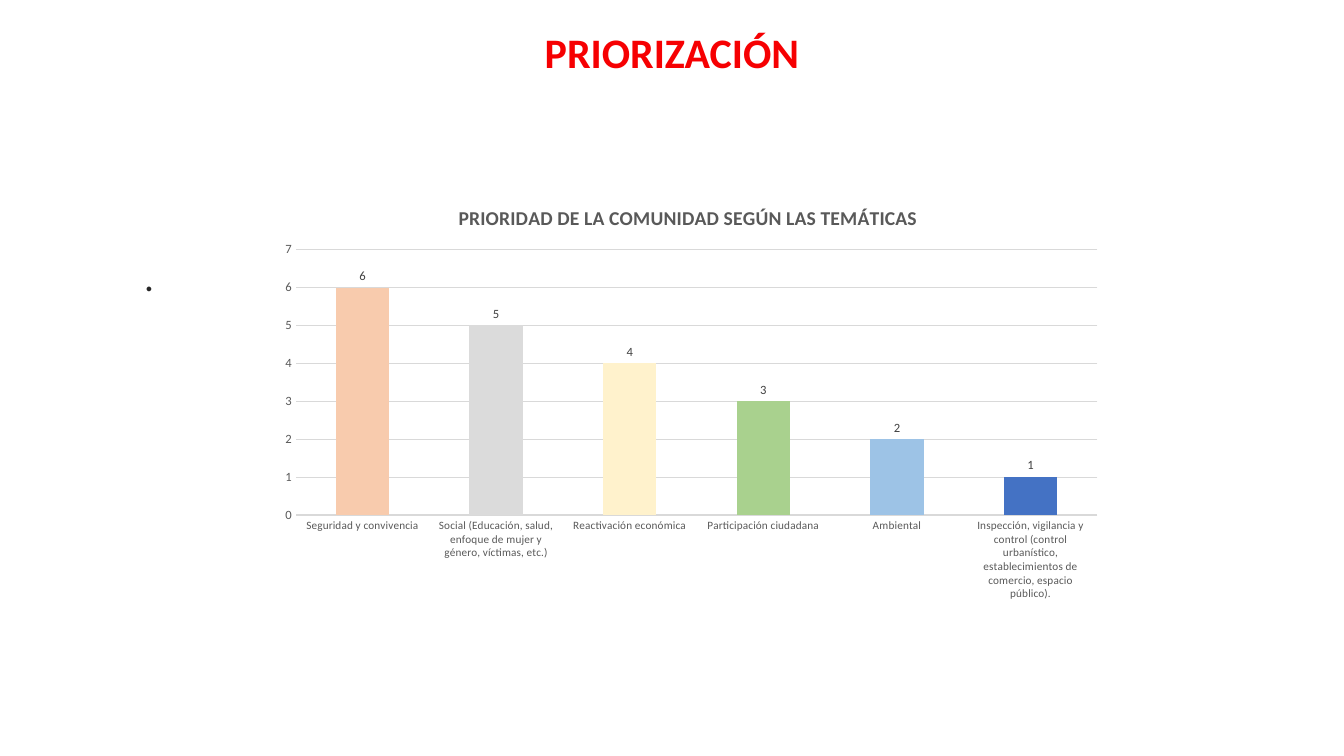
from dataclasses import dataclass

from lxml.etree import SubElement
from pptx import Presentation
from pptx.chart.data import CategoryChartData
from pptx.dml.color import RGBColor
from pptx.enum.chart import XL_CHART_TYPE, XL_LABEL_POSITION, XL_TICK_MARK
from pptx.enum.text import MSO_AUTO_SIZE, PP_ALIGN
from pptx.oxml.ns import qn
from pptx.util import Inches, Pt


@dataclass(frozen=True)
class Theme:
    font: str = "Calibri"
    heading: str = "F60002"
    body: str = "262626"
    axis: str = "595959"
    label: str = "404040"
    grid: str = "D9D9D9"
    heading_size: int = 30
    body_size: int = 28
    chart_title_size: int = 14
    value_size: int = 9
    category_size: int = 8


THEME = Theme()

# Topic, priority score and column colour
PRIORITIES = [
    ("Seguridad y convivencia", 6, "F8CBAD"),
    ("Social (Educación, salud, enfoque de mujer y género, víctimas, etc.)", 5, "DBDBDB"),
    ("Reactivación económica", 4, "FFF2CC"),
    ("Participación ciudadana", 3, "A9D18E"),
    ("Ambiental", 2, "9DC3E6"),
    ("Inspección, vigilancia y control (control urbanístico, "
     "establecimientos de comercio, espacio público).", 1, "4472C4"),
]

# Share of the chart frame taken by the columns
PLOT_LAYOUT = {"x": 0.035, "y": 0.15, "w": 0.95, "h": 0.63}


def set_attributes(target, values):
    for name, value in values.items():
        setattr(target, name, value)


def style_font(font, size, color, bold=False):
    set_attributes(font, {"name": THEME.font, "size": Pt(size), "bold": bold})
    font.color.rgb = RGBColor.from_string(color)


def add_text(slide, box, text, size, color, alignment, bold=False):
    shape = slide.shapes.add_textbox(*map(Inches, box))
    set_attributes(shape.text_frame, {
        "word_wrap": True, "auto_size": MSO_AUTO_SIZE.SHAPE_TO_FIT_TEXT})
    paragraph = shape.text_frame.paragraphs[0]
    paragraph.alignment = alignment
    run = paragraph.add_run()
    run.text = text
    style_font(run.font, size, color, bold)


def style_axis(axis, size):
    set_attributes(axis, {"major_tick_mark": XL_TICK_MARK.NONE,
                          "minor_tick_mark": XL_TICK_MARK.NONE})
    axis.format.line.fill.background()
    style_font(axis.tick_labels.font, size, THEME.axis)


def set_plot_layout(chart):
    plot_area = chart.plots[0]._element.getparent()
    layout = plot_area.find(qn("c:layout"))
    if layout is None:
        layout = SubElement(plot_area, qn("c:layout"))
        plot_area.insert(0, layout)
    manual = SubElement(layout, qn("c:manualLayout"))
    settings = {"layoutTarget": "inner", "xMode": "edge", "yMode": "edge", **PLOT_LAYOUT}
    for name, value in settings.items():
        SubElement(manual, qn(f"c:{name}")).set("val", str(value))


def add_priority_chart(slide, box, title):
    topics, scores, colors = zip(*PRIORITIES)
    data = CategoryChartData(number_format="General")
    data.categories = topics
    data.add_series("Series 1", scores)
    chart = slide.shapes.add_chart(
        XL_CHART_TYPE.COLUMN_CLUSTERED, *map(Inches, box), data).chart
    chart.has_legend = False
    style_font(chart.font, 10, "000000")

    # Chart title
    title_frame = chart.chart_title.text_frame
    title_frame.text = title
    style_font(title_frame.paragraphs[0].runs[0].font,
               THEME.chart_title_size, THEME.axis, bold=True)
    chart.chart_title.include_in_layout = False

    # Axes and gridlines
    style_axis(chart.category_axis, THEME.category_size)
    style_axis(chart.value_axis, THEME.value_size)
    set_attributes(chart.value_axis, {
        "minimum_scale": 0, "maximum_scale": 7, "major_unit": 1})
    grid_line = chart.value_axis.major_gridlines.format.line
    grid_line.width = Pt(0.75)
    grid_line.color.rgb = RGBColor.from_string(THEME.grid)

    # Columns and their values
    plot = chart.plots[0]
    set_attributes(plot, {"gap_width": 150, "vary_by_categories": False,
                          "has_data_labels": True})
    set_attributes(plot.data_labels, {
        "show_value": True, "position": XL_LABEL_POSITION.OUTSIDE_END})
    style_font(plot.data_labels.font, THEME.value_size, THEME.label)
    for index, color in enumerate(colors):
        fill = plot.series[0].points[index].format.fill
        fill.solid()
        fill.fore_color.rgb = RGBColor.from_string(color)
    set_plot_layout(chart)


def main():
    presentation = Presentation()
    set_attributes(presentation, {"slide_width": Inches(13.33),
                                  "slide_height": Inches(7.5)})
    slide = presentation.slides.add_slide(presentation.slide_layouts[6])

    add_text(slide, (1.33, 2.45, 9.51, 0.57), ".",
             THEME.body_size, THEME.body, PP_ALIGN.JUSTIFY)
    add_text(slide, (2.64, 0.21, 8.05, 0.61), "PRIORIZACIÓN",
             THEME.heading_size, THEME.heading, PP_ALIGN.CENTER, bold=True)
    add_priority_chart(slide, (2.64, 1.85, 8.37, 4.18),
                       "PRIORIDAD DE LA COMUNIDAD SEGÚN LAS TEMÁTICAS")

    presentation.save("out.pptx")


if __name__ == "__main__":
    main()
